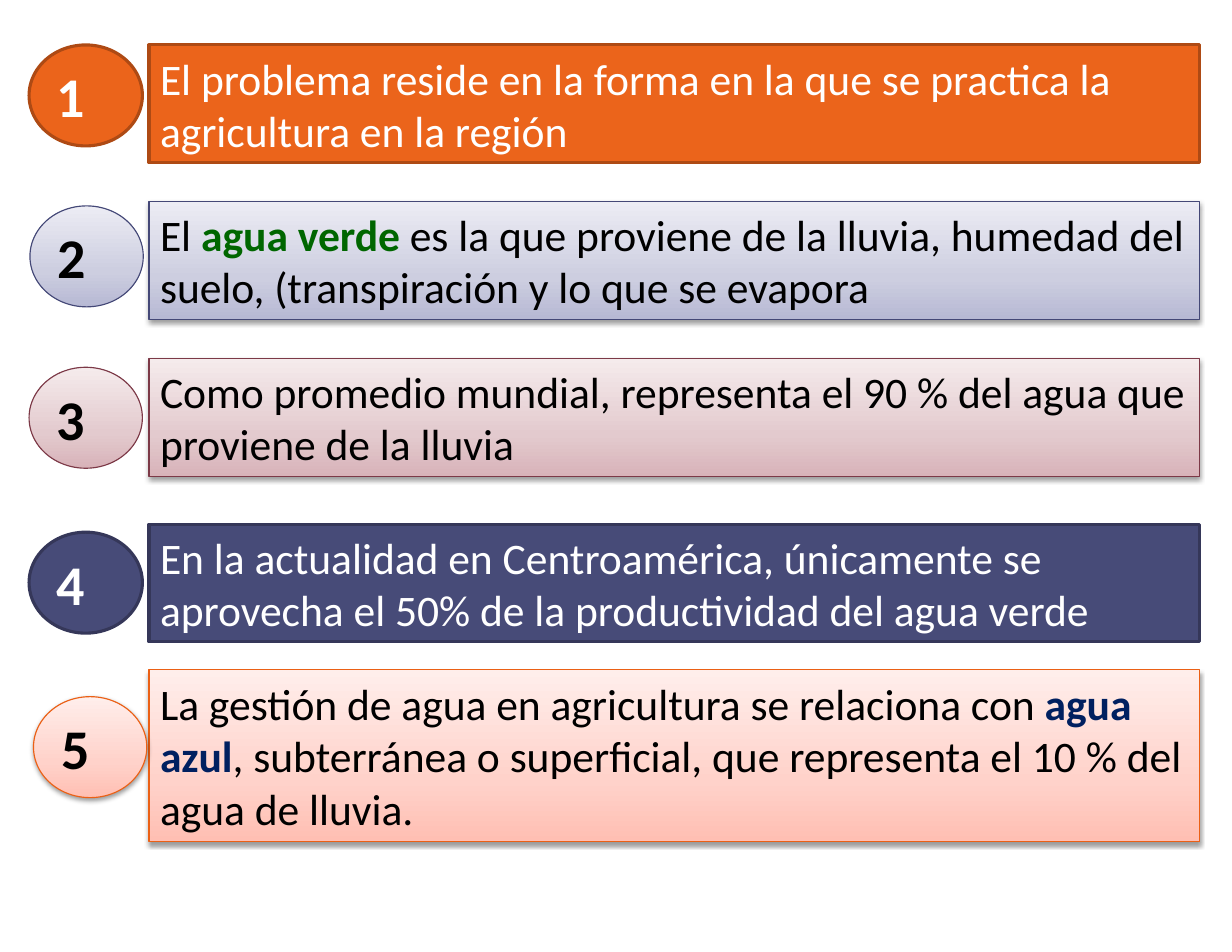
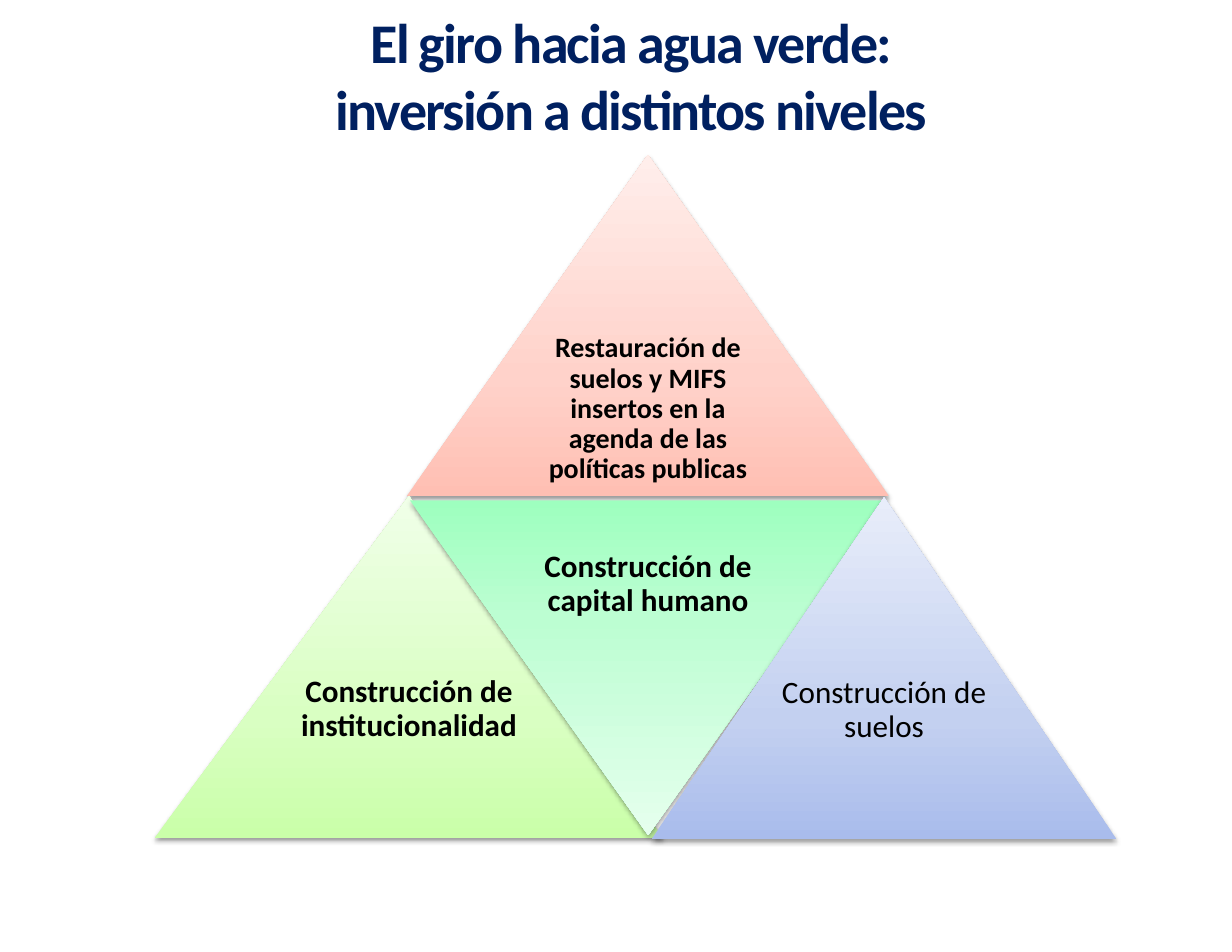
from pptx import Presentation
from pptx import oxml
from pptx import util as u
from pptx.dml import color
from pptx.enum import shapes, text
from pptx.oxml import ns

BLACK, WHITE, NAVY, GREEN = "000000", "FFFFFF", "002060", "006600"
CORAL = ("FFBFB3", "FFD2CA", "FFEEEB")
LAVENDER = ("B7B9D4", "CDCEE0", "ECECF4")
ROSE = ("D8B3B9", "E3CACE", "F5EBEC")
LIME = ("CAFFA9", "D9FFC2", "F0FFE8")
MINT = ("9EFFBF", "BCFED2", "E5FFED")
BLUE = ("A9BCEC", "C3D0F0", "E8EDFA")

STATEMENTS = [
    dict(top=1.02, circle=(0.66, 1.02), fill="EB641B", line="AE4A14",
         parts=[("El problema reside en la forma en la que se practica la agricultura en la región", None)]),
    dict(top=4.57, circle=(0.68, 4.67), fill=LAVENDER, line="444877",
         parts=[("El ", None), ("agua verde ", GREEN),
                ("es la que proviene de la lluvia, humedad del suelo, (transpiración y lo que se evapora", None)]),
    dict(top=8.13, circle=(0.66, 8.33), fill=ROSE, line="7C3947",
         parts=[("Como promedio mundial, representa el 90 % del agua que proviene de la lluvia", None)]),
    dict(top=11.89, circle=(0.66, 12.07), fill="474B78", line="353759",
         parts=[("En la actualidad en Centroamérica, únicamente se aprovecha el 50% "
                 "de la productividad del agua verde", None)]),
    dict(top=15.19, circle=(0.76, 15.8), fill=CORAL, line="EB6015", height=3.89, circle_shadow=True,
         parts=[("La gestión de agua en agricultura se relaciona con ", None), ("agua azul", NAVY),
                (", subterránea o superficial, que representa el 10 % del agua de lluvia.", None)]),
]

LEVELS = [
    dict(box=(9.22, 3.51, 10.95, 7.75), fill=CORAL, size=18,
         label="Restauración de suelos y MIFS insertos en la agenda de las políticas publicas"),
    dict(box=(3.51, 11.25, 11.53, 7.75), fill=LIME, label="Construcción de institucionalidad"),
    dict(box=(9.22 + 0.08, 11.35, 10.8, 7.59), fill=MINT, label="Construcción de capital humano", inverted=True),
    dict(box=(14.78, 11.28, 10.54, 7.75), fill=BLUE, label="Construcción de suelos", bold=False),
]


def rgb(value):
    return color.RGBColor.from_string(value)


class Deck:
    """Holds the shared style and the slide being built."""

    font_name = "Calibri"

    def __init__(self):
        self.presentation = Presentation()
        self.presentation.slide_width = u.Cm(27.94)
        self.presentation.slide_height = u.Cm(21.59)
        self.slide = None

    def add_slide(self, layout):
        self.slide = self.presentation.slides.add_slide(self.presentation.slide_layouts[layout])

    def format_run(self, run, size, colour, bold=False):
        run.font.name = self.font_name
        run.font.size = u.Pt(size)
        run.font.bold = bold
        run.font.color.rgb = rgb(colour)

    def gradient(self, shape, colours):
        shape.fill.gradient()
        properties = shape._element.spPr
        stops = "".join(f'<a:gs pos="{position}"><a:srgbClr val="{colour}"/></a:gs>'
                        for position, colour in zip((0, 35000, 100000), colours))
        properties.replace(properties.find(ns.qn("a:gradFill")), oxml.parse_xml(
            f'<a:gradFill {ns.nsdecls("a")} rotWithShape="1"><a:gsLst>{stops}</a:gsLst>'
            '<a:lin ang="16200000" scaled="0"/></a:gradFill>'))

    def shadow(self, shape):
        shape._element.spPr.find(ns.qn("a:effectLst")).append(oxml.parse_xml(
            f'<a:outerShdw {ns.nsdecls("a")} blurRad="40000" dist="20000" dir="5400000" rotWithShape="0">'
            '<a:srgbClr val="000000"><a:alpha val="38000"/></a:srgbClr></a:outerShdw>'))

    def shape(self, kind, box, fill, line=None, shadow=False):
        shape = self.slide.shapes.add_shape(kind, *map(u.Cm, box))
        shape.shadow.inherit = False
        if isinstance(fill, str):
            shape.fill.solid()
            shape.fill.fore_color.rgb = rgb(fill)
        else:
            self.gradient(shape, fill)
        if line:
            shape.line.color.rgb = rgb(line)
            shape.line.width = u.Pt(2 if isinstance(fill, str) else 0.75)
        else:
            shape.line.fill.background()
        if shadow:
            self.shadow(shape)
        return shape

    def statement(self, number, top, circle, fill, line, parts, height=2.67, circle_shadow=False):
        solid = isinstance(fill, str)
        colour = WHITE if solid else BLACK
        banner = self.shape(shapes.MSO_SHAPE.RECTANGLE, (3.38, top, 23.82, height), fill, line, not solid)
        paragraph = banner.text_frame.paragraphs[0]
        paragraph.alignment = text.PP_ALIGN.LEFT
        for words, accent in parts:
            run = paragraph.add_run()
            run.text = words
            self.format_run(run, 28, accent or colour, bool(accent))
        badge = self.shape(shapes.MSO_SHAPE.OVAL, (*circle, 2.57, 2.29), fill, line, circle_shadow)
        badge.text_frame.text = str(number)
        self.format_run(badge.text_frame.paragraphs[0].runs[0], 36, colour, True)

    def level(self, box, fill, label, size=20, bold=True, inverted=False):
        left, top, width, height = box
        triangle = self.shape(shapes.MSO_SHAPE.ISOSCELES_TRIANGLE, box, fill, shadow=True)
        triangle.rotation = 180 if inverted else 0
        label_top = top if inverted else top + height / 2
        label_box = (left + width / 4, label_top, width / 2, height / 2)
        frame = self.slide.shapes.add_textbox(*map(u.Cm, label_box)).text_frame
        frame.word_wrap = True
        frame.vertical_anchor = text.MSO_ANCHOR.MIDDLE if inverted else text.MSO_ANCHOR.TOP
        frame.margin_left = frame.margin_right = frame.margin_top = frame.margin_bottom = u.Cm(size / 100)
        frame.text = label
        paragraph = frame.paragraphs[0]
        paragraph.alignment = text.PP_ALIGN.CENTER
        paragraph.line_spacing = 0.9
        self.format_run(paragraph.runs[0], size, BLACK, bold)

    def title(self, words, box):
        title = self.slide.shapes.title
        title.left, title.top, title.width, title.height = map(u.Cm, box)
        frame = title.text_frame
        frame.auto_size = text.MSO_AUTO_SIZE.NONE
        frame.vertical_anchor = text.MSO_ANCHOR.MIDDLE
        frame.margin_left = frame.margin_top = frame.margin_bottom = 0
        frame.margin_right = u.Cm(0.28)
        frame.text = words
        paragraph = frame.paragraphs[0]
        paragraph.alignment = text.PP_ALIGN.CENTER
        for run in paragraph.runs:
            self.format_run(run, 36, NAVY, True)
            run._r.get_or_add_rPr().set("spc", "-110")


def main():
    deck = Deck()
    deck.add_slide(6)
    for number, statement in enumerate(STATEMENTS, 1):
        deck.statement(number, **statement)
    deck.add_slide(5)
    deck.title("El giro hacia agua verde:\vinversión a distintos niveles", (2.39, 0.13, 24.13, 3.12))
    for level in LEVELS:
        deck.level(**level)
    deck.presentation.save("out.pptx")


if __name__ == "__main__":
    main()
